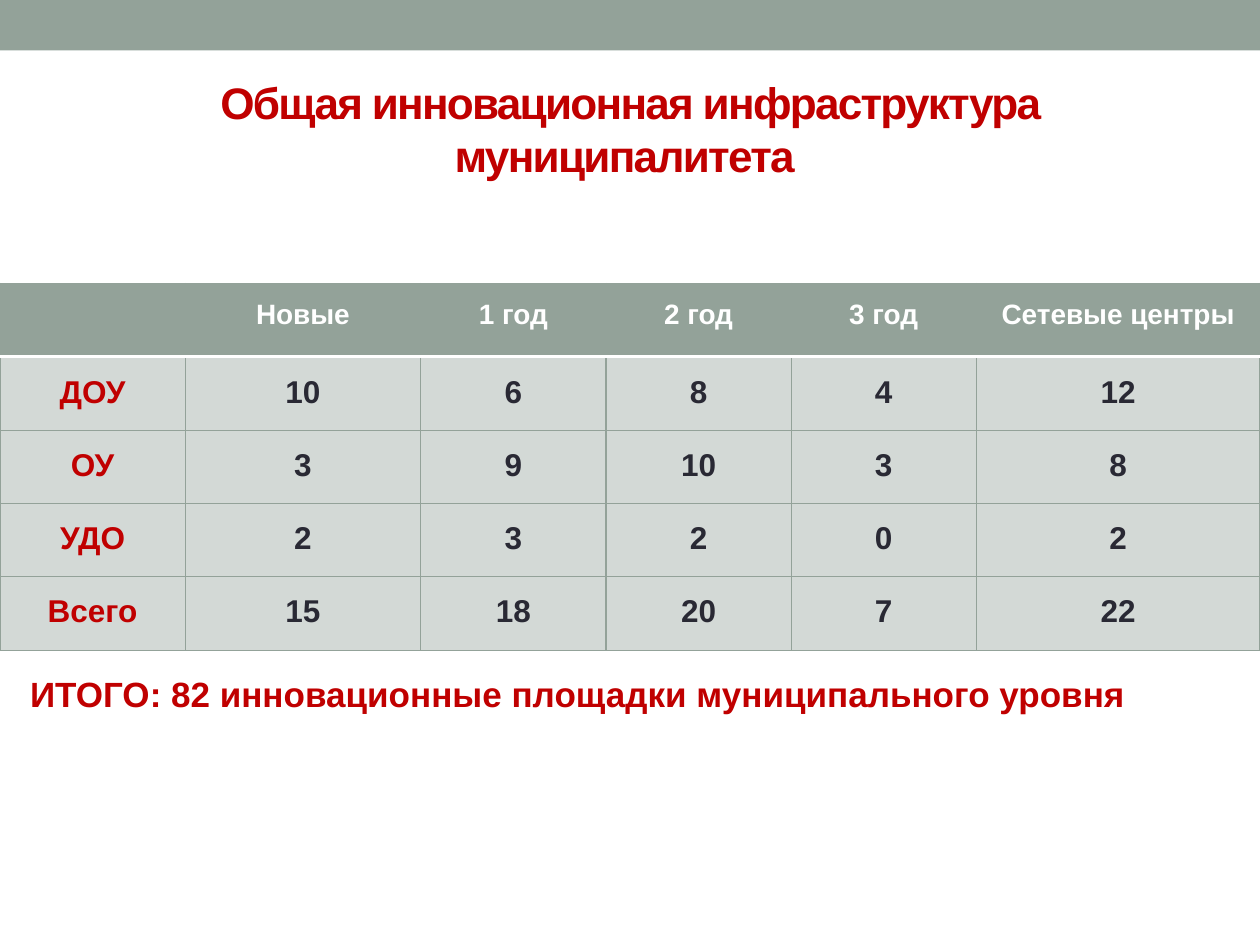
from lxml.etree import SubElement as Sub
from pptx import Presentation
from pptx.dml.color import RGBColor as Rgb
from pptx.enum.shapes import MSO_SHAPE as Kind
from pptx.enum.text import MSO_ANCHOR as Anchor, MSO_AUTO_SIZE as Fit, PP_ALIGN as Align
from pptx.oxml.ns import qn
from pptx.util import Inches, Pt

TITLE = "Общая инновационная инфраструктура муниципалитета "
TOTAL = "ИТОГО: 82 инновационные площадки муниципального уровня"
ROWS = [
    ["", "Новые", "1 год", "2 год", "3 год", "Сетевые центры"],
    ["ДОУ", "10", "6", "8", "4", "12"],
    ["ОУ", "3", "9", "10", "3", "8"],
    ["УДО", "2", "3", "2", "0", "2"],
    ["Всего", "15", "18", "20", "7", "22"],
]
WIDTHS = [1.47, 1.87, 1.47, 1.47, 1.47, 2.25]
HIGH = 2.91

THEME = {
    "font": "Arial", "sage": "93A299", "pale": "D3D9D6", "red": "C00000",
    "ink": "292934", "white": "FFFFFF",
    "title": 25.2, "head": 16, "body": 18, "total": 20,
}


def tint(name):
    return Rgb.from_string(THEME[name])


def apply(item, form):
    for key, val in form.items():
        setattr(item, key, val)


def write(frame, text, size, color, **form):
    para = frame.paragraphs[0]
    apply(para, form)
    run = para.add_run()
    run.text = text
    apply(run.font, {"name": THEME["font"], "size": Pt(THEME[size]), "bold": True})
    run.font.color.rgb = tint(color)
    return run


def edge(cell, side, color, width):
    line = Sub(cell._tc.get_or_add_tcPr(), qn("a:ln" + side), w=str(Pt(width)))
    fill = Sub(line, qn("a:solidFill"))
    Sub(fill, qn("a:srgbClr"), val=THEME[color])


def style(cell, row, col, text):
    head = row == 0
    for side in "LRTB":
        rule = (row, side) in ((0, "B"), (1, "T"))
        edge(cell, side, *(("white", 2.08) if rule else ("sage", 0.75)))
    cell.fill.solid()
    cell.fill.fore_color.rgb = tint("sage" if head else "pale")
    apply(cell, {
        "margin_left": Inches(0.07), "margin_right": Inches(0.07),
        "margin_top": 0, "margin_bottom": 0,
    })
    color = "white" if head else "ink" if col else "red"
    if text:
        write(cell.text_frame, text, "head" if head else "body", color,
              alignment=Align.CENTER, line_spacing=1.5)


def box(slide, spot, **form):
    frame = slide.shapes.add_textbox(*map(Inches, spot)).text_frame
    apply(frame, form)
    return frame


def grid(slide):
    table = slide.shapes.add_table(
        len(ROWS), len(WIDTHS), 0, Inches(2.25), Inches(10), Inches(HIGH)).table
    for col, width in zip(table.columns, WIDTHS):
        col.width = Inches(width)
    for line in table.rows:
        line.height = Inches(HIGH / len(ROWS))
    for row, texts in enumerate(ROWS):
        for col, text in enumerate(texts):
            style(table.cell(row, col), row, col, text)


def main():
    deck = Presentation()
    apply(deck, {"slide_width": Inches(10), "slide_height": Inches(7.5)})
    slide = deck.slides.add_slide(deck.slide_layouts[6])

    band = slide.shapes.add_shape(Kind.RECTANGLE, 0, 0, Inches(10), Inches(0.4))
    band.shadow.inherit = False
    band.fill.solid()
    band.fill.fore_color.rgb = tint("sage")
    band.line.fill.background()

    title = box(slide, (0.5, 0.58, 9, 0.88), word_wrap=True,
                vertical_anchor=Anchor.MIDDLE)
    run = write(title, TITLE, "title", "red", alignment=Align.CENTER)
    run.font._element.set("spc", "-100")

    grid(slide)

    total = box(slide, (0.14, 5.29, 9.12, 0.44), word_wrap=False,
                auto_size=Fit.SHAPE_TO_FIT_TEXT)
    write(total, TOTAL, "total", "red")
    deck.save("out.pptx")


if __name__ == "__main__":
    main()
